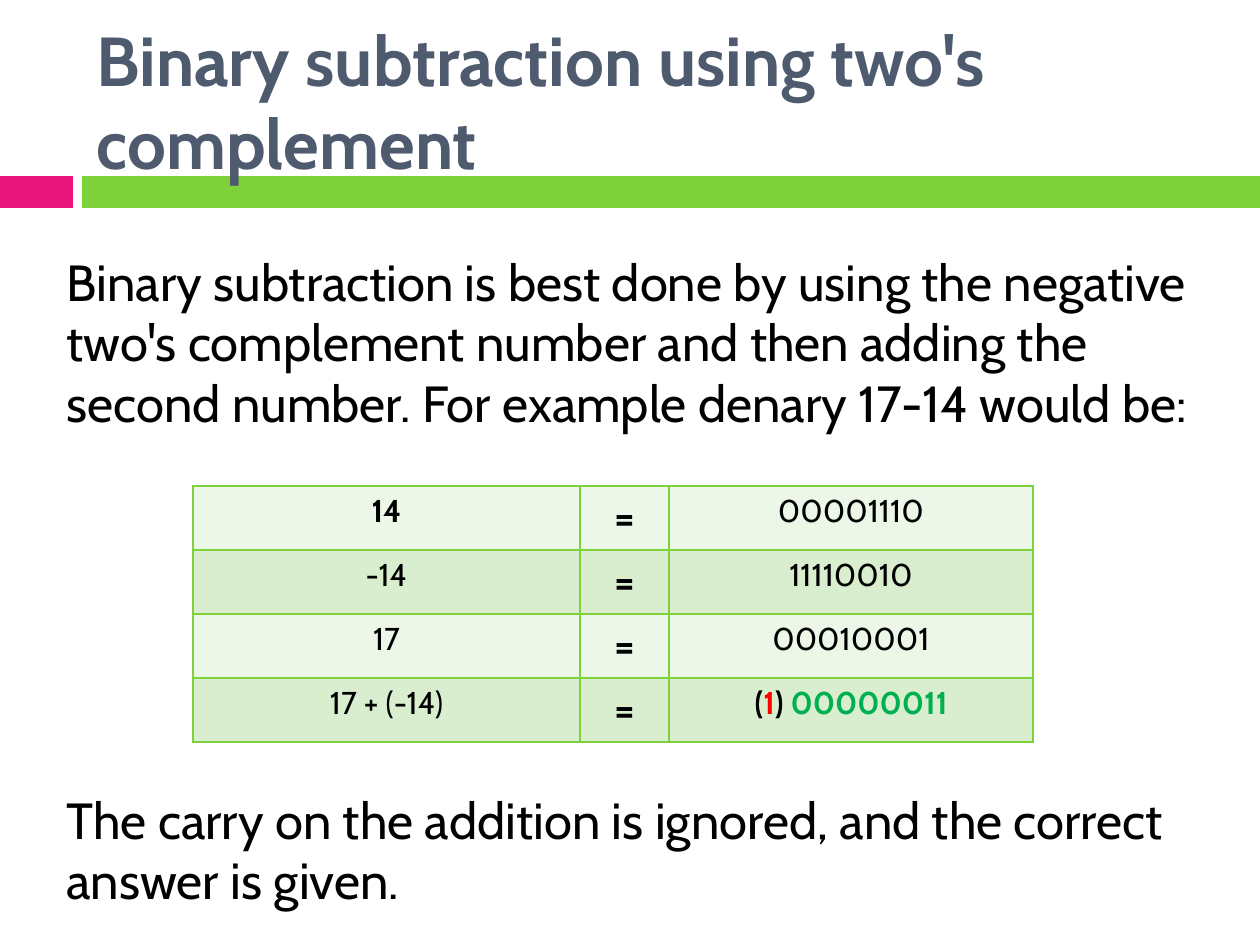
from dataclasses import dataclass

from lxml.etree import SubElement
from pptx import Presentation
from pptx.dml.color import RGBColor
from pptx.enum.shapes import MSO_SHAPE
from pptx.enum.text import MSO_ANCHOR, MSO_AUTO_SIZE, PP_ALIGN
from pptx.oxml.ns import qn
from pptx.util import Emu, Pt

FONT = "Cabin"
GREEN = "7FD13B"
BLACK = "000000"


@dataclass
class Box:
    """A place on the slide in px."""
    left: int
    top: int
    width: int
    height: int


@dataclass
class Bar:
    """A plain filled strip."""
    box: Box
    fill: str


@dataclass
class Part:
    """A piece of text with one look."""
    text: str
    size: float = 18
    color: str = BLACK
    bold: bool = False


BARS = [
    Bar(Box(0, 176, 73, 32), "EA157A"),
    Bar(Box(82, 176, 1178, 32), GREEN),
]
TITLE = Part("Binary subtraction using two's complement", 39.6, "4E5B6F", True)
BODY = [
    Part("Binary subtraction is best done by using the negative two's complement "
         "number and then adding the second number. For example denary 17-14 would be:", 29),
    Part("The carry on the addition is ignored, and the correct answer is given.", 29),
]
GAP = 203
EQUALS = [Part("=", 24, bold=True)]
ROWS = [
    ([Part("14", bold=True)], [Part("00001110")]),
    ([Part("-14")], [Part("11110010")]),
    ([Part("17")], [Part("00010001")]),
    ([Part("17 + (-14)")], [
        Part("(", bold=True),
        Part("1", color="FF0000", bold=True),
        Part(") ", bold=True),
        Part("00000011", color="00B050", bold=True),
    ]),
]
COLS = [387, 89, 364]
BANDS = ["ECF7E8", "D8EECE"]
STEP = 64


def px(n: int) -> Emu:
    """Turn px into EMU."""
    return Emu(round(n * 914400 / 126))


def rgb(code: str) -> RGBColor:
    """Turn a hex string into a colour."""
    return RGBColor.from_string(code)


def place(shape, box: Box) -> None:
    """Move and size a shape."""
    shape.left, shape.top = px(box.left), px(box.top)
    shape.width, shape.height = px(box.width), px(box.height)


def style(run, part: Part) -> None:
    """Give a run the look of its part."""
    font = run.font
    font.name, font.size, font.bold = FONT, Pt(part.size), part.bold
    font.color.rgb = rgb(part.color)


def draw_bar(slide, bar: Bar) -> None:
    """Draw one strip."""
    shape = slide.shapes.add_shape(MSO_SHAPE.RECTANGLE, 0, 0, 0, 0)
    place(shape, bar.box)
    shape.shadow.inherit = False
    shape.fill.solid()
    shape.fill.fore_color.rgb = rgb(bar.fill)
    shape.line.fill.background()


def fill_holder(slide, holder, box: Box, parts: list[Part], anchor) -> None:
    """Move a placeholder to the front and fill it with paragraphs."""
    slide.shapes._spTree.append(holder._element)
    place(holder, box)
    frame = holder.text_frame
    frame.text = "\n".join(part.text for part in parts)
    frame.word_wrap, frame.auto_size = True, MSO_AUTO_SIZE.NONE
    frame.vertical_anchor = anchor
    for i, (para, part) in enumerate(zip(frame.paragraphs, parts)):
        para.alignment = PP_ALIGN.LEFT
        para.space_before = Pt(GAP * i)
        props = para._p.get_or_add_pPr()
        props.set("marL", "0")
        props.set("indent", "0")
        SubElement(props, qn("a:buNone"))
        style(para.runs[0], part)


def edge(cell) -> None:
    """Put a thin line on each side of a cell."""
    props = cell._tc.get_or_add_tcPr()
    for i, side in enumerate(("lnL", "lnR", "lnT", "lnB")):
        line = props.makeelement(qn(f"a:{side}"), {"w": str(Pt(1))})
        fill = SubElement(line, qn("a:solidFill"))
        SubElement(fill, qn("a:srgbClr"), val=GREEN)
        props.insert(i, line)


def fill_cell(cell, parts: list[Part], fill: str) -> None:
    """Write one cell of the table."""
    cell.fill.solid()
    cell.fill.fore_color.rgb = rgb(fill)
    edge(cell)
    para = cell.text_frame.paragraphs[0]
    para.alignment = PP_ALIGN.CENTER
    for part in parts:
        run = para.add_run()
        run.text = part.text
        style(run, part)


def draw_table(slide) -> None:
    """Draw the sums, one to a row."""
    frame = slide.shapes.add_table(len(ROWS), len(COLS), px(193), px(486),
                                   px(sum(COLS)), px(STEP * len(ROWS)))
    table = frame.table
    table.first_row = table.horz_banding = False
    for col, width in zip(table.columns, COLS):
        col.width = px(width)
    for i, (left, right) in enumerate(ROWS):
        table.rows[i].height = px(STEP)
        for j, parts in enumerate((left, EQUALS, right)):
            fill_cell(table.cell(i, j), parts, BANDS[i % 2])


def main() -> None:
    """Build and save the slide."""
    deck = Presentation()
    deck.slide_width, deck.slide_height = px(1260), px(945)
    slide = deck.slides.add_slide(deck.slide_layouts[1])
    for bar in BARS:
        draw_bar(slide, bar)
    title, body = slide.placeholders
    fill_holder(slide, title, Box(84, 32, 1143, 136), [TITLE], MSO_ANCHOR.MIDDLE)
    fill_holder(slide, body, Box(54, 244, 1173, 242), BODY, MSO_ANCHOR.TOP)
    draw_table(slide)
    deck.save("out.pptx")


if __name__ == "__main__":
    main()
